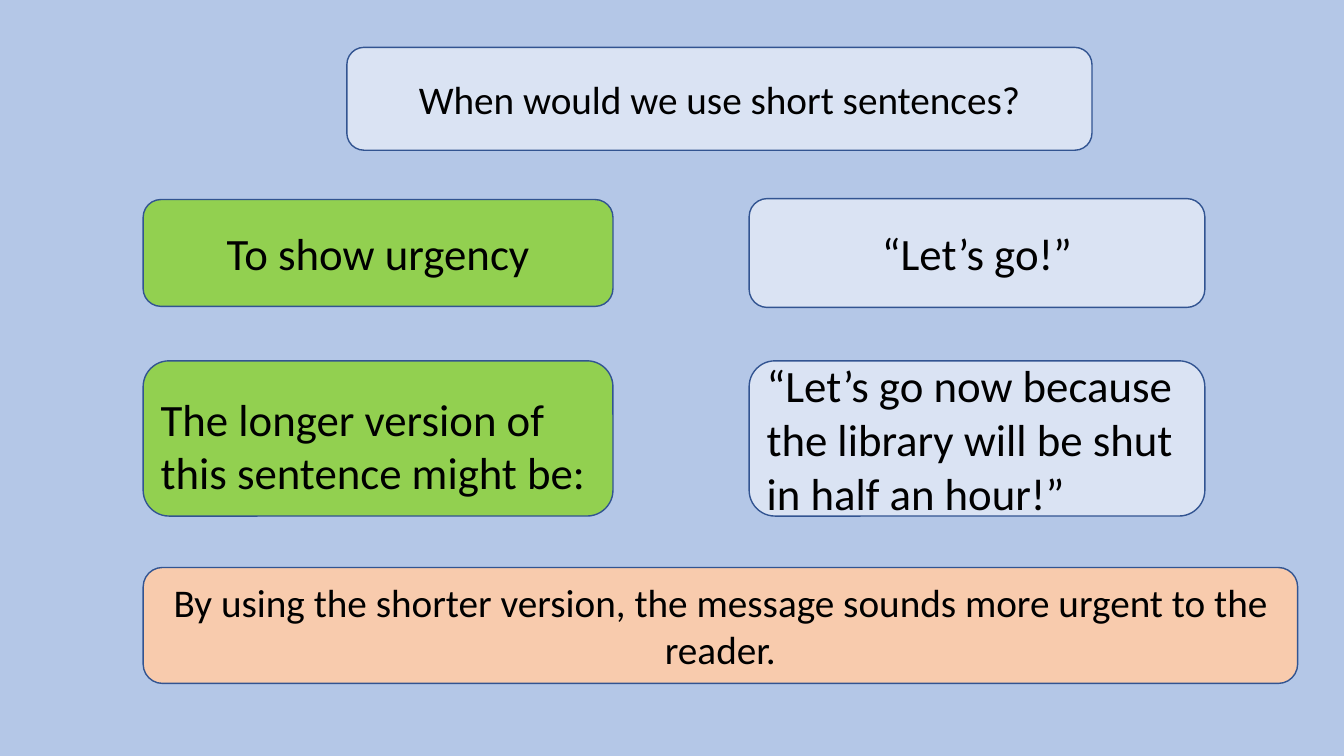
from pptx import Presentation
from pptx import util as u
from pptx.dml.color import RGBColor
from pptx.enum import shapes, text

PX = u.Inches(0.01)
BACKGROUND = RGBColor(0xB4, 0xC7, 0xE7)
PALE_BLUE = RGBColor(0xDA, 0xE3, 0xF3)
GREEN = RGBColor(0x92, 0xD0, 0x50)
PEACH = RGBColor(0xF8, 0xCB, 0xAD)
OUTLINE = RGBColor(0x32, 0x54, 0x91)
BLACK = RGBColor(0, 0, 0)
LEFT = 142


def write_text(shape, content, size=32, align=text.PP_ALIGN.CENTER, top_inset=5):
    frame = shape.text_frame
    frame.word_wrap = True
    frame.vertical_anchor = text.MSO_ANCHOR.MIDDLE
    frame.margin_top = top_inset * PX
    paragraph = frame.paragraphs[0]
    paragraph.alignment = align
    run = paragraph.add_run()
    run.text = content
    run.font.name = "Calibri"
    run.font.size = u.Pt(size)
    run.font.color.rgb = BLACK


def add_card(slide, box, fill, content, **text_format):
    shape = slide.shapes.add_shape(
        shapes.MSO_SHAPE.ROUNDED_RECTANGLE, *(length * PX for length in box))
    shape.shadow.inherit = False
    shape.fill.solid()
    shape.fill.fore_color.rgb = fill
    shape.line.color.rgb = OUTLINE
    shape.line.width = u.Pt(1)
    write_text(shape, content, **text_format)


def add_example_column(slide, box, fill, short, longer, short_height, longer_inset=5):
    left, top, width, height = box
    longer_height = 154
    add_card(slide, (left, top, width, short_height), fill, short)
    add_card(slide, (left, top + height - longer_height, width, longer_height), fill,
             longer, align=text.PP_ALIGN.LEFT, top_inset=longer_inset)


def build_sentence_slide(presentation):
    slide = presentation.slides.add_slide(presentation.slide_layouts[6])
    slide.background.fill.solid()
    slide.background.fill.fore_color.rgb = BACKGROUND
    add_card(slide, (344, 47, 739, 102), PALE_BLUE,
             "When would we use short sentences?", size=28)
    add_example_column(slide, (LEFT, 198, 466, 314), GREEN, "To show urgency",
                       "The longer version of this sentence might be:",
                       short_height=106, longer_inset=18)
    add_example_column(slide, (743, 197, 452, 315), PALE_BLUE, "“Let’s go!”",
                       "“Let’s go now because the library will be shut in half an hour!”",
                       short_height=108)
    add_card(slide, (LEFT, 563, 1145, 115), PEACH,
             "By using the shorter version, the message sounds more urgent to the reader.",
             size=28)


def main():
    presentation = Presentation()
    presentation.slide_width = 1333 * PX
    presentation.slide_height = 750 * PX
    build_sentence_slide(presentation)
    presentation.save("out.pptx")


if __name__ == "__main__":
    main()
